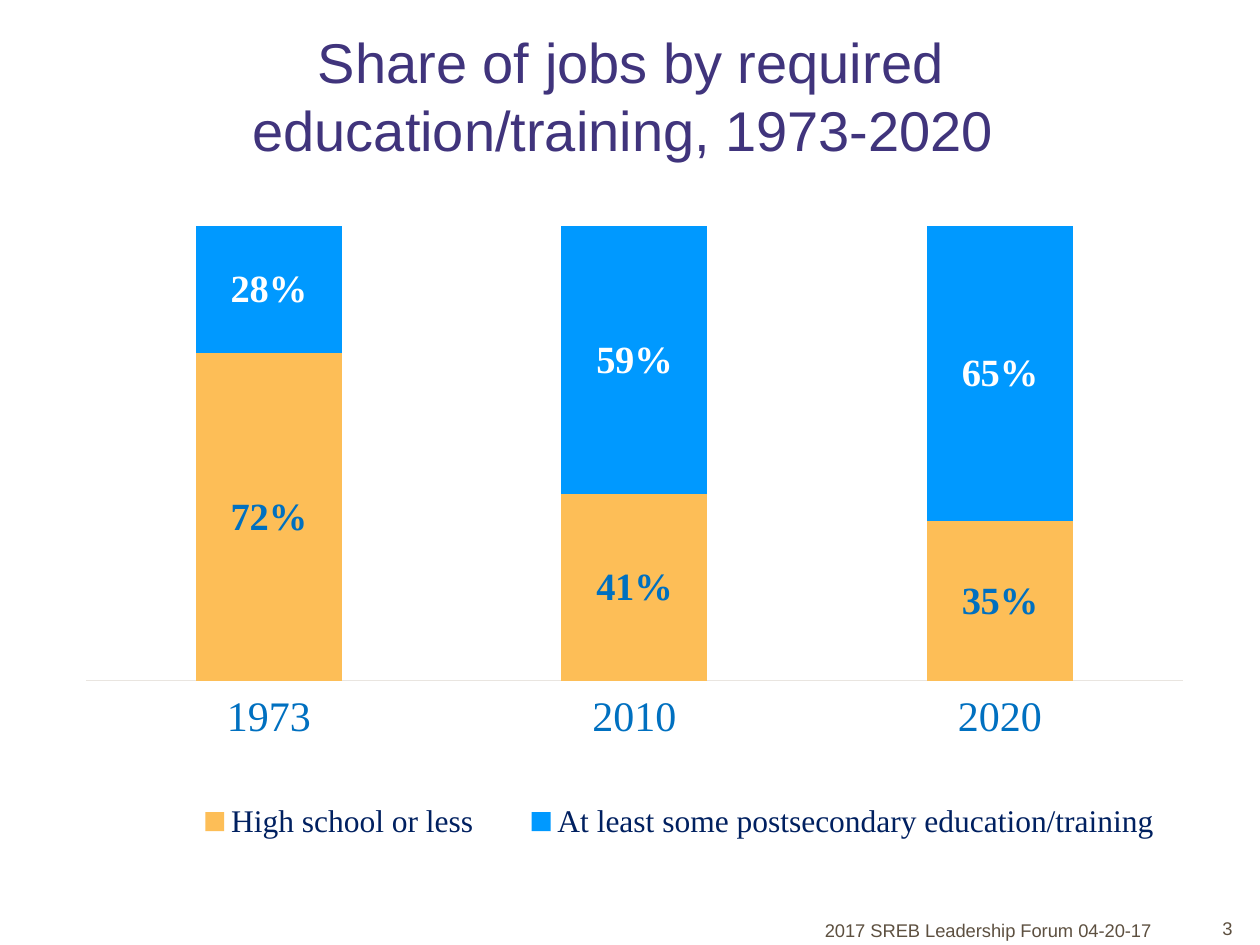
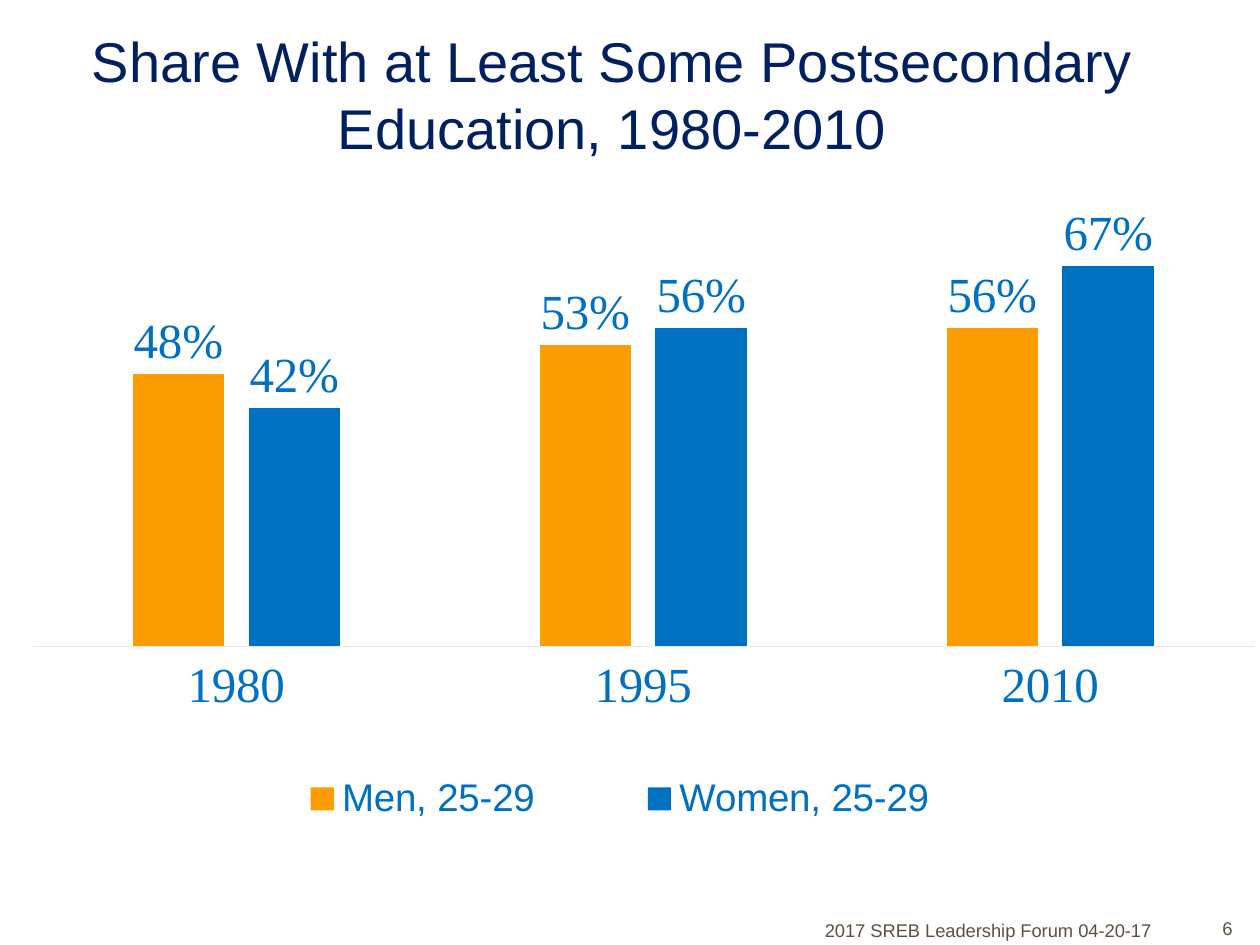
from dataclasses import dataclass

from lxml import etree
from pptx import Presentation
from pptx.chart.data import CategoryChartData
from pptx.dml.color import RGBColor
from pptx.enum.chart import (XL_CHART_TYPE, XL_LABEL_POSITION,
                             XL_LEGEND_POSITION, XL_TICK_LABEL_POSITION,
                             XL_TICK_MARK)
from pptx.enum.text import MSO_ANCHOR, MSO_AUTO_SIZE, PP_ALIGN
from pptx.oxml.ns import qn
from pptx.util import Inches, Pt

SANS, SERIF = "Arial", "Times New Roman"
BLUE, NAVY, PURPLE, BROWN = "0070C0", "002060", "40347C", "5D5040"
WHITE, AXIS_LINE = "FFFFFF", "E9E5E0"
FOOTER = "2017 SREB Leadership Forum 04-20-17"

Box = tuple[float, float, float, float]


@dataclass
class TextStyle:
    size: float
    color: str
    name: str = SANS
    bold: bool = False


@dataclass
class Series:
    name: str
    values: tuple[float, ...]
    fill: str
    label: TextStyle


@dataclass
class ColumnChart:
    kind: XL_CHART_TYPE
    box: Box
    years: tuple[str, ...]
    series: tuple[Series, ...]
    label_position: XL_LABEL_POSITION
    axis_max: float
    gap: int
    overlap: int
    axis_style: TextStyle
    legend_style: TextStyle
    plot_layout: Box
    legend_layout: Box


@dataclass
class ChartSlide:
    title: str
    title_box: Box
    title_color: str
    title_anchor: MSO_ANCHOR
    number: int
    chart: ColumnChart


SMALL = TextStyle(10.5, BROWN)
LARGE = TextStyle(28, BLUE, SERIF)

SLIDES = (
    ChartSlide(
        "Share of jobs by required education/training, 1973-2020 ",
        (0.83, 0.13, 8.36, 1.25), PURPLE, MSO_ANCHOR.MIDDLE, 3,
        ColumnChart(
            kind=XL_CHART_TYPE.COLUMN_STACKED_100,
            box=(0.53, 1.64, 9.01, 5.22),
            years=("1973", "2010", "2020"),
            series=(
                Series("High school or less", (0.72, 0.41, 0.35), "FDBE57",
                       TextStyle(22, BLUE, SERIF, True)),
                Series("At least some postsecondary education/training",
                       (0.28, 0.59, 0.65), "0099FF",
                       TextStyle(22, WHITE, SERIF, True)),
            ),
            label_position=XL_LABEL_POSITION.CENTER,
            axis_max=1, gap=150, overlap=100,
            axis_style=TextStyle(24, BLUE, SERIF),
            legend_style=TextStyle(18, NAVY, SERIF),
            plot_layout=(0.017, 0.029, 0.966, 0.692),
            legend_layout=(0.08, 0.89, 0.92, 0.09),
        ),
    ),
    ChartSlide(
        "Share With at Least Some Postsecondary Education, 1980-2010",
        (0.21, 0.16, 9.3, 1.18), NAVY, MSO_ANCHOR.TOP, 6,
        ColumnChart(
            kind=XL_CHART_TYPE.COLUMN_CLUSTERED,
            box=(0.07, 1.43, 10, 5.28),
            years=("1980", "1995", "2010"),
            series=(
                Series("Men, 25-29", (0.48, 0.53, 0.56), "FC9E03", LARGE),
                Series("Women, 25-29", (0.42, 0.56, 0.67), BLUE, LARGE),
            ),
            label_position=XL_LABEL_POSITION.OUTSIDE_END,
            axis_max=0.8, gap=219, overlap=-27,
            axis_style=LARGE,
            legend_style=TextStyle(22, BLUE),
            plot_layout=(0.019, 0.018, 0.969, 0.683),
            legend_layout=(0.16, 0.88, 0.65, 0.1),
        ),
    ),
)


def rgb(color: str) -> RGBColor:
    return RGBColor.from_string(color)


def set_font(font, style: TextStyle) -> None:
    values = {"name": style.name, "size": Pt(style.size), "bold": style.bold}
    for attr, value in values.items():
        setattr(font, attr, value)
    font.color.rgb = rgb(style.color)


def add_text(slide, text: str, box: Box, style: TextStyle,
             align: PP_ALIGN, anchor: MSO_ANCHOR = MSO_ANCHOR.MIDDLE) -> None:
    tf = slide.shapes.add_textbox(*map(Inches, box)).text_frame
    frame_format = {"word_wrap": True, "vertical_anchor": anchor,
                    "auto_size": MSO_AUTO_SIZE.NONE}
    for attr, value in frame_format.items():
        setattr(tf, attr, value)
    p = tf.paragraphs[0]
    p.alignment = align
    r = p.add_run()
    r.text = text
    set_font(r.font, style)


def set_layout(parent, index: int, box: Box, inner: bool = False) -> None:
    """Fix a chart part at fractions of the chart area."""
    for old in parent.findall(qn("c:layout")):
        parent.remove(old)
    layout = etree.Element(qn("c:layout"))
    manual = etree.SubElement(layout, qn("c:manualLayout"))
    settings = [("layoutTarget", "inner")] if inner else []
    settings += [("xMode", "edge"), ("yMode", "edge")]
    settings += zip("xywh", map(str, box))
    for tag, value in settings:
        etree.SubElement(manual, qn(f"c:{tag}")).set("val", value)
    parent.insert(index, layout)


def style_axes(chart, spec_chart: ColumnChart) -> None:
    years = chart.category_axis
    years.major_tick_mark = XL_TICK_MARK.NONE
    years.tick_label_position = XL_TICK_LABEL_POSITION.LOW
    years.format.line.color.rgb = rgb(AXIS_LINE)
    years.format.line.width = Pt(0.75)
    set_font(years.tick_labels.font, spec_chart.axis_style)

    shares = chart.value_axis
    scale = {"minimum_scale": 0, "maximum_scale": spec_chart.axis_max,
             "has_major_gridlines": False, "visible": False}
    for attr, value in scale.items():
        setattr(shares, attr, value)


def style_series(plot, column_chart: ColumnChart) -> None:
    plot.gap_width = column_chart.gap
    plot.overlap = column_chart.overlap
    plot.vary_by_categories = False
    for bars, series in zip(plot.series, column_chart.series):
        bars.invert_if_negative = False
        bars.format.fill.solid()
        bars.format.fill.fore_color.rgb = rgb(series.fill)
        labels = bars.data_labels
        label_format = {"show_value": True, "number_format": "0%",
                        "number_format_is_linked": False,
                        "position": column_chart.label_position}
        for attr, value in label_format.items():
            setattr(labels, attr, value)
        set_font(labels.font, series.label)


def add_column_chart(slide, column_chart: ColumnChart) -> None:
    data = CategoryChartData(number_format="0%")
    data.categories = column_chart.years
    for series in column_chart.series:
        data.add_series(series.name, series.values)
    chart = slide.shapes.add_chart(
        column_chart.kind, *map(Inches, column_chart.box), data).chart
    set_font(chart.font, column_chart.axis_style)
    chart.has_title = False
    style_axes(chart, column_chart)
    style_series(chart.plots[0], column_chart)

    chart.has_legend = True
    chart.legend.position = XL_LEGEND_POSITION.BOTTOM
    chart.legend.include_in_layout = False
    set_font(chart.legend.font, column_chart.legend_style)
    root = chart.element.find(qn("c:chart"))
    set_layout(root.find(qn("c:plotArea")), 0, column_chart.plot_layout, True)
    set_layout(root.find(qn("c:legend")), 1, column_chart.legend_layout)


def add_chart_slide(prs, content: ChartSlide) -> None:
    slide = prs.slides.add_slide(prs.slide_layouts[6])
    add_column_chart(slide, content.chart)
    add_text(slide, content.title, content.title_box,
             TextStyle(32, content.title_color), PP_ALIGN.CENTER,
             content.title_anchor)
    add_text(slide, FOOTER, (5.8, 7.16, 3.44, 0.45), SMALL, PP_ALIGN.RIGHT)
    add_text(slide, str(content.number), (9.26, 7.14, 0.62, 0.45), SMALL,
             PP_ALIGN.RIGHT)


def main() -> None:
    prs = Presentation()
    prs.slide_width, prs.slide_height = Inches(10), Inches(7.5)
    for content in SLIDES:
        add_chart_slide(prs, content)
    prs.save("out.pptx")


if __name__ == "__main__":
    main()
